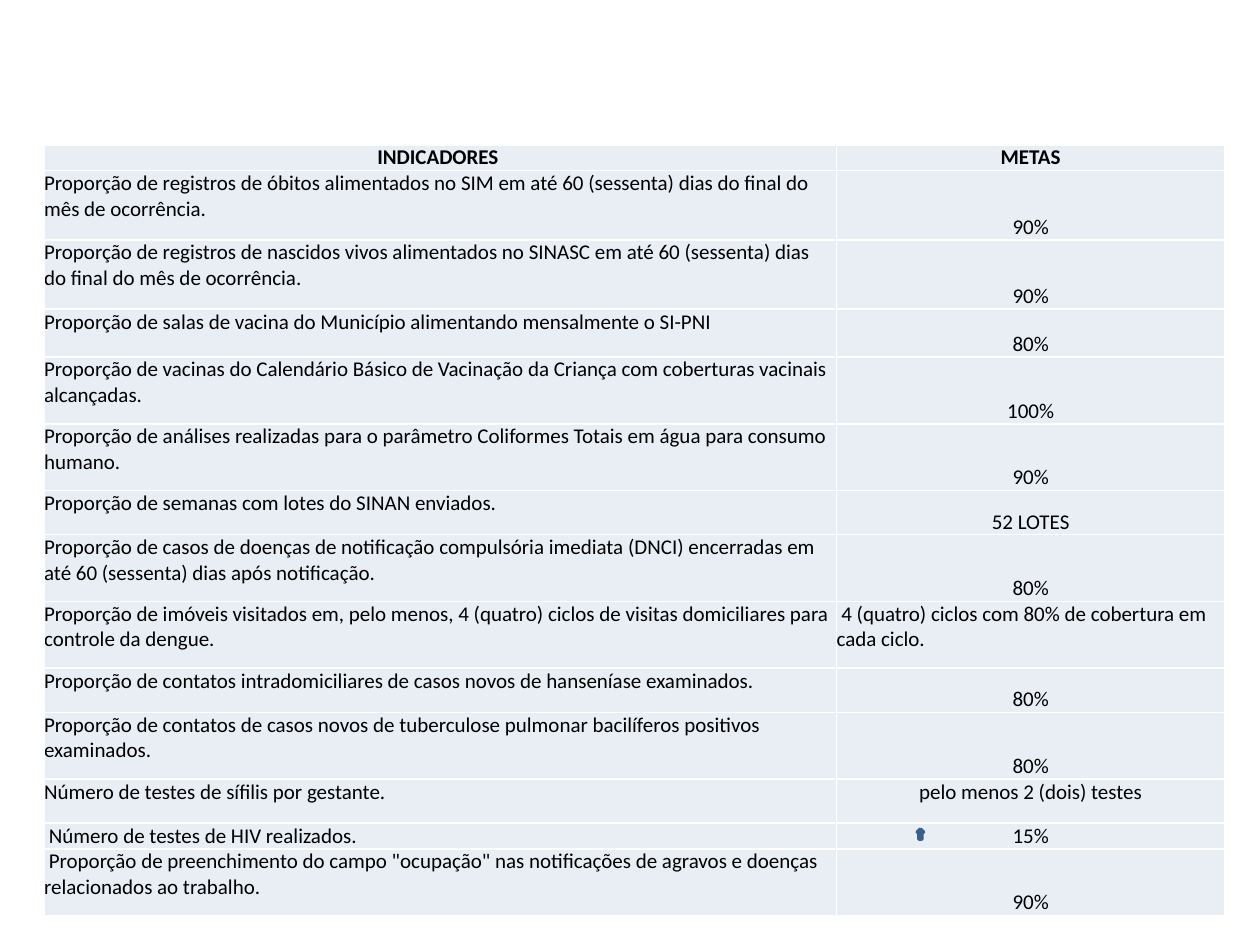
"""Build a slide with a table of health surveillance indicators and their goals."""
from typing import NamedTuple

from pptx import Presentation
from pptx import util as u
from pptx.dml.color import RGBColor
from pptx.enum import shapes, text

COLORS = {"text": "000000", "cell": "E9EDF4", "arrow": "4F81BD", "outline": "3A5F8C"}
FONT = "Calibri"
COLUMN_WIDTHS = (6.29, 3.08)
CENTER, LEFT = text.PP_ALIGN.CENTER, text.PP_ALIGN.LEFT
TOP, BOTTOM = text.MSO_ANCHOR.TOP, text.MSO_ANCHOR.BOTTOM


class Indicator(NamedTuple):
    """One table row: wording, goal, height in inches and goal placement."""
    name: str
    goal: str
    height: float = 0.53
    anchor: text.MSO_ANCHOR = BOTTOM
    align: text.PP_ALIGN = CENTER


INDICATORS = [
    Indicator("Proporção de registros de óbitos alimentados no SIM em até 60 (sessenta) dias "
              "do final do mês de ocorrência.", "90%", 0.55),
    Indicator("Proporção de registros de nascidos vivos alimentados no SINASC em até 60 "
              "(sessenta) dias do final do mês de ocorrência.", "90%", 0.55),
    Indicator("Proporção de salas de vacina do Município alimentando mensalmente o SI-PNI",
              "80%", 0.38),
    Indicator("Proporção de vacinas do Calendário Básico de Vacinação da Criança com "
              "coberturas vacinais alcançadas.", "100%"),
    Indicator("Proporção de análises realizadas para o parâmetro Coliformes Totais em água "
              "para consumo humano.", "90%"),
    Indicator("Proporção de semanas com lotes do SINAN enviados.", "52 LOTES", 0.35),
    Indicator("Proporção de casos de doenças de notificação compulsória imediata (DNCI) "
              "encerradas em até 60 (sessenta) dias após notificação.", "80%"),
    Indicator("Proporção de imóveis visitados em, pelo menos, 4 (quatro) ciclos de visitas "
              "domiciliares para controle da dengue.",
              " 4 (quatro) ciclos com 80% de cobertura em cada ciclo.",
              anchor=TOP, align=LEFT),
    Indicator("Proporção de contatos intradomiciliares de casos novos de hanseníase "
              "examinados.", "80%", 0.35),
    Indicator("Proporção de contatos de casos novos de tuberculose pulmonar bacilíferos "
              "positivos examinados.", "80%"),
    Indicator("Número de testes de sífilis por gestante.", "pelo menos 2 (dois) testes",
              0.35, TOP),
    Indicator(" Número de testes de HIV realizados.", "15%", 0.18, TOP),
    Indicator(" Proporção de preenchimento do campo \"ocupação\" nas notificações de agravos "
              "e doenças relacionados ao trabalho.", "90%"),
]


def color(name: str) -> RGBColor:
    """Look up a named colour."""
    return RGBColor.from_string(COLORS[name])


def write_cell(cell, words: str, *, align=LEFT, anchor=TOP, bold: bool = False) -> None:
    """Fill a cell and write its formatted text."""
    cell.fill.solid()
    cell.fill.fore_color.rgb = color("cell")
    cell.margin_left = cell.margin_right = cell.margin_top = cell.margin_bottom = 0
    cell.vertical_anchor = anchor
    para = cell.text_frame.paragraphs[0]
    para.alignment = align
    span = para.add_run()
    span.text = words
    span.font.name, span.font.size, span.font.bold = FONT, u.Pt(12), bold
    span.font.color.rgb = color("text")


def add_indicator_table(page) -> None:
    """Draw the header and one row for each indicator."""
    heights = [0.18] + [row.height for row in INDICATORS]
    table = page.shapes.add_table(
        len(heights), len(COLUMN_WIDTHS), u.Inches(0.35), u.Inches(1.15),
        u.Inches(sum(COLUMN_WIDTHS)), u.Inches(sum(heights))).table
    table.first_row = table.horz_banding = False
    for column, width in zip(table.columns, COLUMN_WIDTHS):
        column.width = u.Inches(width)
    for line, height in zip(table.rows, heights):
        line.height = u.Inches(height)
    for index, heading in enumerate(("INDICADORES ", "METAS")):
        write_cell(table.cell(0, index), heading, align=CENTER, anchor=BOTTOM, bold=True)
    for index, row in enumerate(INDICATORS, start=1):
        write_cell(table.cell(index, 0), row.name)
        write_cell(table.cell(index, 1), row.goal, align=row.align, anchor=row.anchor)


def add_increase_arrow(page) -> None:
    """Mark the HIV testing goal with a small upward arrow."""
    arrow = page.shapes.add_shape(shapes.MSO_SHAPE.UP_ARROW, u.Inches(7.28),
                                  u.Inches(6.58), u.Inches(0.05), u.Inches(0.08))
    arrow.shadow.inherit = False
    arrow.fill.solid()
    arrow.fill.fore_color.rgb = color("arrow")
    arrow.line.color.rgb = color("outline")
    arrow.line.width = u.Pt(2)


def main() -> None:
    """Build and save the deck."""
    deck = Presentation()
    deck.slide_width, deck.slide_height = u.Inches(10), u.Inches(7.5)
    page = deck.slides.add_slide(deck.slide_layouts[6])
    add_indicator_table(page)
    add_increase_arrow(page)
    deck.save("out.pptx")


if __name__ == "__main__":
    main()
